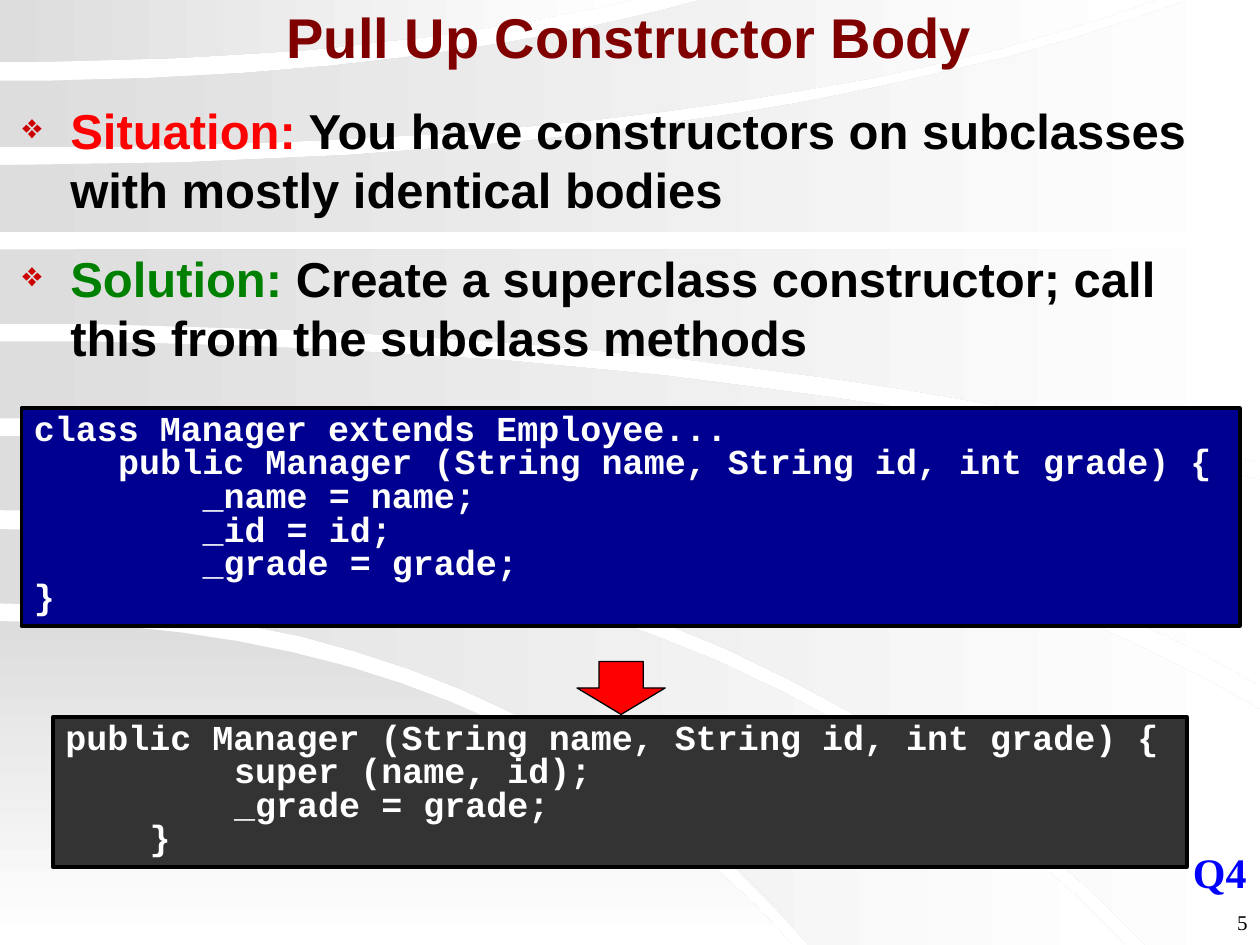
from dataclasses import dataclass
from typing import NamedTuple

from lxml.etree import SubElement
from pptx import Presentation
from pptx.dml.color import RGBColor
from pptx.enum.shapes import MSO_SHAPE
from pptx.enum.text import MSO_ANCHOR, PP_ALIGN
from pptx.oxml.ns import qn
from pptx.util import Pt

PX = 9144  # one px is a hundredth of an inch


class Box(NamedTuple):
    left: int
    top: int
    width: int
    height: int

    def emu(self):
        return [value * PX for value in self]

    def inside(self, left, top, width, height):
        return Box(self.left + left, self.top + top, width, height)


class Edge(NamedTuple):
    """A curve that leaves the left side level and bends to its end."""
    start_y: int
    bend_x: int
    end_x: int
    end_y: int

    def points(self, steps=16):
        fractions = [step / steps for step in range(steps + 1)]
        return [(round(2 * t * (1 - t) * self.bend_x + t * t * self.end_x),
                 round(self.start_y + t * t * (self.end_y - self.start_y)))
                for t in fractions]


@dataclass(frozen=True)
class Theme:
    sans: str = "Arial"
    serif: str = "Times New Roman"
    mono: str = "Courier New"
    title: str = "800000"
    ink: str = "000000"
    situation: str = "FF0000"
    solution: str = "008000"
    bullet: str = "CC0000"
    before_fill: str = "000090"
    after_fill: str = "333333"
    code: str = "FFFFFF"
    arrow: str = "FF0000"
    quiz: str = "0000FF"
    band_dark: str = "DDDDDD"
    band_light: str = "FFFFFF"
    title_size: int = 32
    body_size: int = 28
    quiz_size: int = 24
    code_size: int = 20
    number_size: int = 12


THEME = Theme()

# Background bands, back to front: gradient angle, upper edge, corners passed, lower edge
BANDS = [
    (270, Edge(493, 400, 629, 750), [], Edge(750, 315, 629, 750)),
    (0, Edge(420, 580, 893, 750), [], Edge(479, 410, 642, 750)),
    (0, Edge(346, 630, 1000, 563), [(1000, 750)], Edge(405, 582, 909, 750)),
    (0, Edge(271, 554, 1000, 381), [], Edge(332, 630, 1000, 544)),
    (0, Edge(198, 500, 1000, 198), [], Edge(257, 570, 1000, 367)),
    (0, Edge(131, 585, 943, 0), [(1000, 0)], Edge(184, 500, 1000, 184)),
    (0, Edge(64, 322, 556, 0), [], Edge(117, 604, 917, 0)),
    (0, Edge(0, 250, 501, 0), [], Edge(49, 293, 501, 0)),
]


def color(value):
    return RGBColor.from_string(value)


def add_run(paragraph, text, size, font, ink, bold=True):
    run = paragraph.add_run()
    run.text = text
    run.font.size, run.font.name, run.font.bold = Pt(size), font, bold
    run.font.color.rgb = color(ink)


def add_text(slide, box, anchor=MSO_ANCHOR.TOP, wrap=True):
    frame = slide.shapes.add_textbox(*box.emu()).text_frame
    frame.word_wrap, frame.vertical_anchor = wrap, anchor
    return frame


def add_solid(slide, kind, box, fill, line_width):
    shape = slide.shapes.add_shape(kind, *box.emu())
    shape.shadow.inherit = False
    shape.fill.solid()
    shape.fill.fore_color.rgb = color(fill)
    shape.line.color.rgb = color(THEME.ink)
    shape.line.width = Pt(line_width)
    return shape


def set_bullet(paragraph, margin):
    properties = paragraph._p.get_or_add_pPr()
    properties.set("marL", str(margin * PX))
    properties.set("indent", str(-margin * PX))
    tint = SubElement(properties, qn("a:buClr"))
    SubElement(tint, qn("a:srgbClr")).set("val", THEME.bullet)
    SubElement(properties, qn("a:buSzPct")).set("val", "70000")
    SubElement(properties, qn("a:buChar")).set("char", "❖")


def add_background(slide, box):
    for angle, upper, corners, lower in BANDS:
        outline = upper.points() + corners + lower.points()[::-1]
        points = [(box.left + x, box.top + y) for x, y in outline]
        builder = slide.shapes.build_freeform(*points[0], scale=PX)
        builder.add_line_segments(points[1:], close=True)
        band = builder.convert_to_shape()
        band.shadow.inherit = False
        band.line.fill.background()
        band.fill.gradient()
        band.fill.gradient_angle = angle
        for stop, tone in zip(band.fill.gradient_stops, (THEME.band_dark, THEME.band_light)):
            stop.color.rgb = color(tone)


def add_title(slide, box, text):
    paragraph = add_text(slide, box, MSO_ANCHOR.MIDDLE).paragraphs[0]
    paragraph.alignment = PP_ALIGN.CENTER
    add_run(paragraph, text, THEME.title_size, THEME.sans, THEME.title)


def add_points(slide, box, points):
    frame = add_text(slide, box)
    for index, (label, ink, text) in enumerate(points):
        paragraph = frame.add_paragraph() if index else frame.paragraphs[0]
        paragraph.line_spacing = Pt(33.7)
        paragraph.space_before = Pt(17 if index else 1)
        set_bullet(paragraph, 38)
        add_run(paragraph, label, THEME.body_size, THEME.sans, ink)
        add_run(paragraph, text, THEME.body_size, THEME.sans, THEME.ink)


def add_code(slide, box, fill, lines):
    frame = add_solid(slide, MSO_SHAPE.RECTANGLE, box, fill, 2).text_frame
    frame.word_wrap, frame.vertical_anchor = True, MSO_ANCHOR.TOP
    for index, (level, text) in enumerate(lines):
        paragraph = frame.add_paragraph() if index else frame.paragraphs[0]
        paragraph.alignment, paragraph.line_spacing = PP_ALIGN.LEFT, 0.8
        paragraph._p.get_or_add_pPr().set("marL", str(level * 67 * PX))
        add_run(paragraph, text, THEME.code_size, THEME.mono, THEME.code)


def add_refactoring(slide, box):
    # Code before, code after, and the arrow between them
    add_code(slide, box.inside(0, 0, 967, 173), THEME.before_fill, [
        (0, "class Manager extends Employee..."),
        (1, "public Manager (String name, String id, int grade) {"),
        (2, "_name = name;"), (2, "_id = id;"), (2, "_grade = grade;"), (0, "}")])
    add_code(slide, box.inside(25, 245, 900, 119), THEME.after_fill, [
        (0, "public Manager (String name, String id, int grade) {"),
        (2, "super (name, id);"), (2, "_grade = grade;"), (1, "}")])
    add_solid(slide, MSO_SHAPE.DOWN_ARROW, box.inside(441, 201, 70, 42), THEME.arrow, 0.75)


def add_footer(slide, box):
    # Quiz mark above the slide number
    quiz = add_text(slide, box.inside(145, 0, 63, 50), wrap=False).paragraphs[0]
    add_run(quiz, "Q4", THEME.quiz_size, THEME.serif, THEME.quiz)
    number = add_text(slide, box.inside(0, 50, 208, 42)).paragraphs[0]
    number.alignment = PP_ALIGN.RIGHT
    add_run(number, "5", THEME.number_size, THEME.serif, THEME.ink, bold=False)


def main():
    presentation = Presentation()
    page = Box(0, 0, 1000, 750)
    presentation.slide_width, presentation.slide_height = page.width * PX, page.height * PX
    slide = presentation.slides.add_slide(presentation.slide_layouts[6])
    add_background(slide, page)
    add_title(slide, page.inside(8, 0, 983, 58), "Pull Up Constructor Body")
    add_points(slide, page.inside(8, 75, 992, 608), [
        ("Situation:", THEME.situation,
         " You have constructors on subclasses with mostly identical bodies"),
        ("Solution:", THEME.solution,
         " Create a superclass constructor; call this from the subclass methods")])
    add_refactoring(slide, page.inside(17, 324, 967, 364))
    add_footer(slide, page.inside(792, 667, 208, 92))
    presentation.save("out.pptx")


if __name__ == "__main__":
    main()
